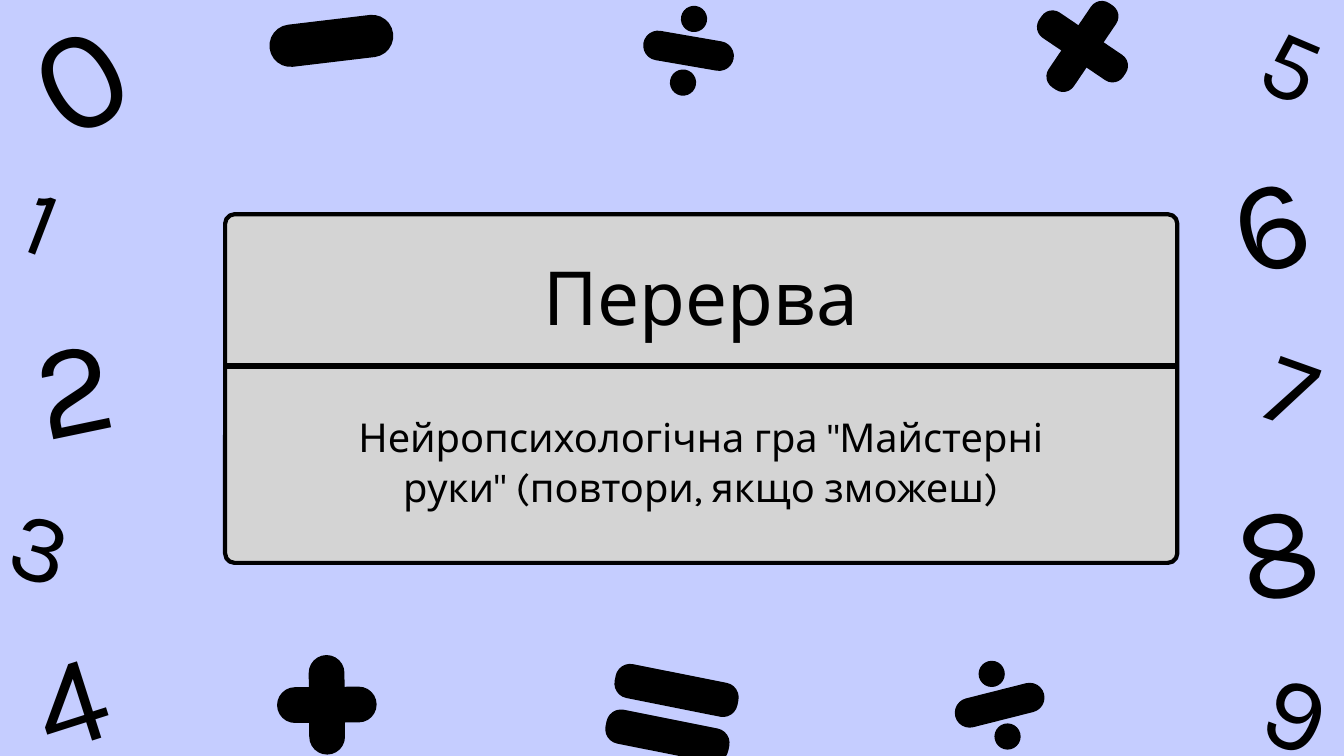
from dataclasses import dataclass
from math import cos, radians, sin

from lxml.etree import SubElement
from pptx import Presentation
from pptx.dml.color import RGBColor
from pptx.enum.shapes import MSO_CONNECTOR as Connector, MSO_SHAPE as Preset
from pptx.enum.text import MSO_ANCHOR as Anchor, MSO_AUTO_SIZE as AutoSize, PP_ALIGN as Align
from pptx.oxml.ns import qn
from pptx.util import Cm, Pt


@dataclass(frozen=True)
class Theme:
    background: RGBColor = RGBColor(0xC5, 0xCD, 0xFF)
    panel: RGBColor = RGBColor(0xD4, 0xD4, 0xD4)
    ink: RGBColor = RGBColor(0, 0, 0)
    font: str = "Karla"
    title_size: float = 79.9
    body_size: float = 42.6
    border: float = 4.5
    divider: float = 6.39
    sign_line: float = 3.75


@dataclass(frozen=True)
class Box:
    left: float
    top: float
    width: float
    height: float

    def inner(self, left, top, width, height):
        return Box(self.left + left, self.top + top, width, height)

    def piece(self, width, height, rise=0, angle=0):
        center_x = self.left + self.width / 2 + rise * sin(radians(angle))
        center_y = self.top + self.height / 2 - rise * cos(radians(angle))
        return Box(center_x - width / 2, center_y - height / 2, width, height)

    def lengths(self):
        return [Cm(value) for value in (self.left, self.top, self.width, self.height)]


THEME = Theme()
FRAME = {"margin_left": 0, "margin_top": 0, "margin_right": 0, "margin_bottom": 0,
         "word_wrap": True, "vertical_anchor": Anchor.TOP,
         "auto_size": AutoSize.SHAPE_TO_FIT_TEXT}
PANEL = Box(8.51, 8.1, 35.99, 13.18)
DIGITS = [
    ("0", Box(0.56, -1.04, 4.27, 6.88), 154.5, -30.5),
    ("1", Box(-0.25, 5.77, 3.89, 4.55), 100.2, 21.1),
    ("2", Box(-0.1, 10.9, 5.54, 6.4), 142.6, -11.9),
    ("3", Box(-0.03, 17.98, 3.38, 4.7), 104.3, 16.2),
    ("4", Box(-0.13, 22.99, 5.23, 6.05), 134.8, -17.7),
    ("5", Box(46.96, -0.23, 4.06, 4.72), 104.8, 23.1),
    ("6", Box(45.19, 4.9, 5.33, 6.17), 137.1, -17.7),
    ("7", Box(47.22, 11.89, 3.51, 4.9), 108.5, 19.6),
    ("8", Box(46.23, 17.17, 3.86, 6.25), 139.7, -13.1),
    ("9", Box(46.99, 24.08, 4.32, 4.98), 111, 20.5),
]


def assign(target, values):
    for name, value in values.items():
        setattr(target, name, value)


def write_text(shape, text, size, spacing):
    frame = shape.text_frame
    assign(frame, FRAME)
    paragraph = frame.paragraphs[0]
    assign(paragraph, {"alignment": Align.CENTER, "line_spacing": Pt(round(size * spacing, 1)),
                       "space_before": Pt(0)})
    run = paragraph.add_run()
    run.text = text
    assign(run.font, {"name": THEME.font, "size": Pt(size), "bold": False})
    run.font.color.rgb = THEME.ink


def add_solid(slide, preset, box, fill, line, angle=0, corner=None):
    shape = slide.shapes.add_shape(preset, *box.lengths())
    shape.shadow.inherit = False
    shape.rotation = angle
    shape.fill.solid()
    shape.fill.fore_color.rgb = fill
    shape.line.color.rgb = THEME.ink
    shape.line.width = Pt(line)
    if corner is not None:
        shape.adjustments[0] = corner


def add_bar(slide, box, angle, corner=0.5):
    add_solid(slide, Preset.ROUNDED_RECTANGLE, box, THEME.ink, THEME.sign_line, angle, corner)


def draw_panel(slide, box):
    add_solid(slide, Preset.ROUNDED_RECTANGLE, box, THEME.panel, THEME.border, corner=0.027)
    middle = box.top + 5.74
    divider = slide.shapes.add_connector(Connector.STRAIGHT, Cm(box.left), Cm(middle),
                                         Cm(box.left + box.width), Cm(middle))
    divider.line.color.rgb = THEME.ink
    divider.line.width = Pt(THEME.divider)
    SubElement(divider.element.spPr, qn("a:effectLst"))
    title, body = slide.placeholders
    texts = [
        (title, "Перерва", THEME.title_size, 1.2, box.inner(3.3, 1.37, 29.36, 3.4)),
        (body, 'Нейропсихологічна гра "Майстерні руки" (повтори, якщо зможеш)',
         THEME.body_size, 1.25, box.inner(3.3, 7.44, 29.36, 3.71)),
    ]
    for placeholder, text, size, spacing, area in texts:
        assign(placeholder, dict(zip(("left", "top", "width", "height"), area.lengths())))
        write_text(placeholder, text, size, spacing)
        slide.shapes.element.append(placeholder.element)


def draw_digit(slide, digit, box, size, angle):
    shape = slide.shapes.add_textbox(*box.lengths())
    shape.rotation = angle
    write_text(shape, digit, size, 1.3)


def draw_cross(slide, box, angle, thickness, corner):
    for turn in (0, -90):
        add_bar(slide, box.piece(box.width, thickness), angle + turn, corner)


def draw_division(slide, box, angle):
    dot = box.height * 0.26
    add_bar(slide, box.piece(box.width, box.height * 0.3), angle)
    for side in (1, -1):
        place = box.piece(dot, dot, side * (box.height - dot) / 2, angle)
        add_solid(slide, Preset.OVAL, place, THEME.ink, THEME.sign_line, angle)


def draw_equals(slide, box, angle):
    bar = box.height * 0.4
    for side in (1, -1):
        place = box.piece(box.width, bar, side * (box.height - bar) / 2, angle)
        add_bar(slide, place, angle, 0.42)


def draw_signs(slide):
    add_bar(slide, Box(10.24, 0.81, 4.57, 1.47), -6.8)
    draw_division(slide, Box(24.36, 0.27, 3.33, 3.3), 9.8)
    draw_cross(slide, Box(39.06, -0.1, 3.71, 3.71), 34.1, 1.02, 0.42)
    draw_cross(slide, Box(10.54, 24.83, 3.63, 3.63), -0.5, 1.22, 0.5)
    draw_equals(slide, Box(23.1, 25.5, 4.6, 2.93), 11.3)
    draw_division(slide, Box(36.12, 25.01, 3.33, 3.3), -14.2)


def main():
    presentation = Presentation()
    assign(presentation, {"slide_width": Cm(50.8), "slide_height": Cm(28.58)})
    slide = presentation.slides.add_slide(presentation.slide_layouts[0])
    slide.background.fill.solid()
    slide.background.fill.fore_color.rgb = THEME.background
    draw_panel(slide, PANEL)
    for digit in DIGITS:
        draw_digit(slide, *digit)
    draw_signs(slide)
    presentation.save("out.pptx")


if __name__ == "__main__":
    main()
